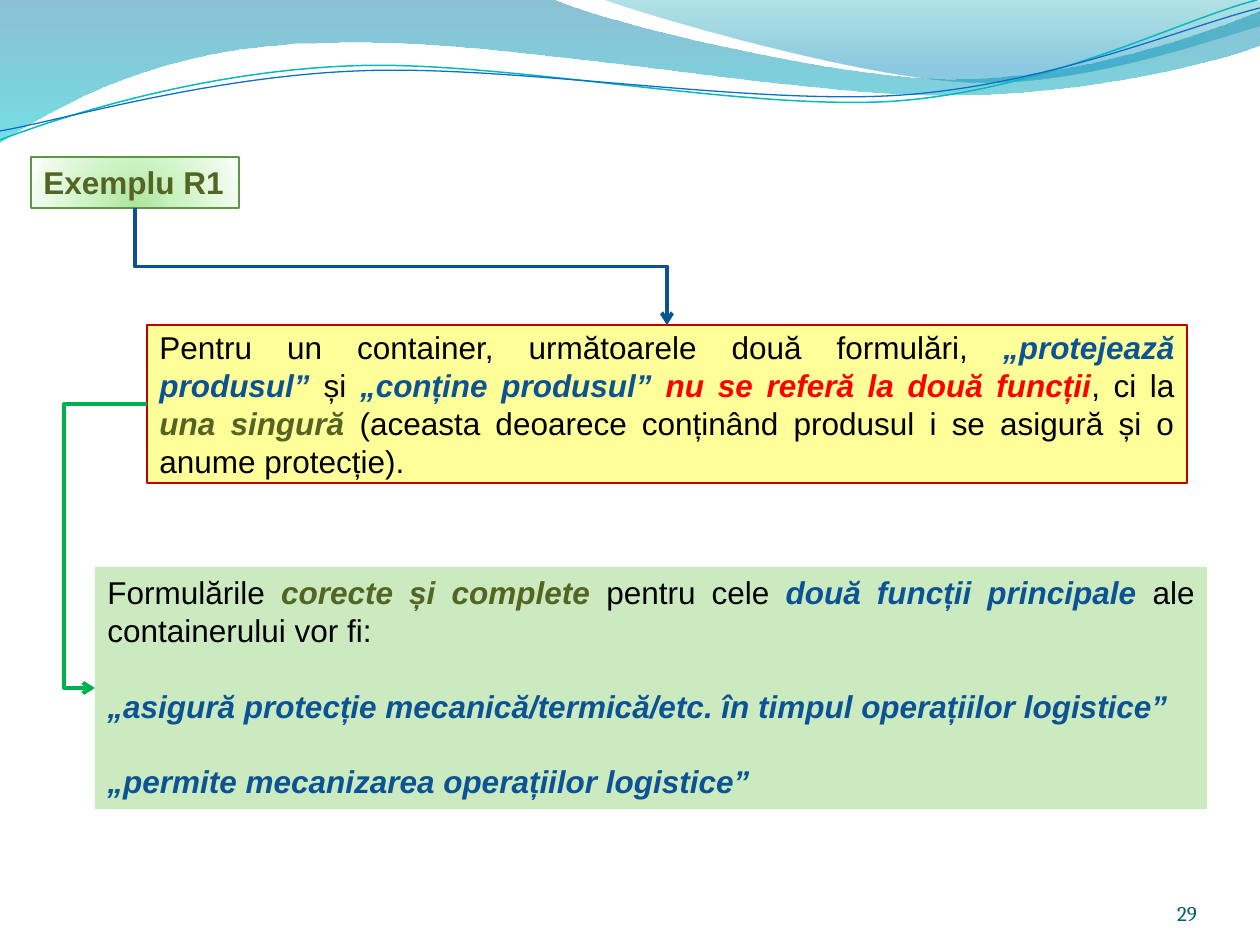
from dataclasses import dataclass

from lxml.etree import SubElement
from pptx import Presentation
from pptx.dml.color import RGBColor
from pptx.enum.shapes import MSO_CONNECTOR, MSO_SHAPE
from pptx.enum.text import MSO_ANCHOR, PP_ALIGN
from pptx.oxml.ns import qn
from pptx.util import Emu, Pt

EMU_PER_PX = 914400 / 126


@dataclass(frozen=True)
class Theme:
    font: str = "Arial"
    number_font: str = "Cambria"
    body_size: float = 18
    number_size: float = 12
    paragraph_gap: float = 21.6
    black: str = "000000"
    blue: str = "0B5394"
    red: str = "FF0000"
    olive: str = "546422"
    number: str = "045D75"
    yellow_fill: str = "FFFF99"
    yellow_line: str = "C00000"
    green_fill: str = "CBEAC0"
    title_line: str = "5B9747"
    blue_arrow: str = "095295"
    green_arrow: str = "00B050"


THEME = Theme()

# Content: paragraphs are lists of (text, colour, bold, italic)
PLAIN = (THEME.black, False, False)
BLUE = (THEME.blue, True, True)
OLIVE = (THEME.olive, True, True)
RED = (THEME.red, True, True)
TITLE = [[("Exemplu R1", THEME.olive, True, False)]]
EXAMPLE = [[
    ("Pentru un container, următoarele două formulări, ", *PLAIN),
    ("„protejează produsul” ", *BLUE),
    ("și ", *PLAIN),
    ("„conține produsul” ", *BLUE),
    ("nu se referă la două funcții", *RED),
    (", ci la ", *PLAIN),
    ("una singură ", *OLIVE),
    ("(aceasta deoarece conținând produsul i se asigură și o anume protecție).", *PLAIN),
]]
ANSWER = [
    [
        ("Formulările ", *PLAIN),
        ("corecte și complete ", *OLIVE),
        ("pentru cele ", *PLAIN),
        ("două funcții principale ", *BLUE),
        ("ale containerului vor fi:", *PLAIN),
    ],
    [("„asigură protecție mecanică/termică/etc. în timpul operațiilor logistice”", *BLUE)],
    [("„permite mecanizarea operațiilor logistice”", *BLUE)],
]
NUMBER = [[("29", THEME.number, False, False)]]

# Boxes in px: left, top, width, height
TITLE_BOX = (31, 157, 208, 51)
EXAMPLE_BOX = (147, 325, 1040, 158)
ANSWER_BOX = (95, 567, 1112, 242)
NUMBER_BOX = (1092, 876, 105, 50)

# Wave outlines in px: a pair is a straight step, six numbers are a Bézier curve.
# Gradient stops: position %, colour, opacity %
WAVE_FILLS = [
    ([(0, 0), (554, 0), (600, 21, 837, 79, 955, 79), (1075, 79, 1207, 33, 1260, 11),
      (1260, 45), (1239, 55, 1096, 96, 940, 95), (784, 95, 481, 35, 324, 43),
      (163, 45, 58, 105, 0, 142)],
     [(0, "0074A1", 45), (100, "00C6CF", 55)]),
    ([(604, 0), (641, 14, 859, 78, 969, 82), (1079, 87, 1211, 40, 1260, 26), (1260, 0)],
     [(0, "00A1A9", 30), (80, "008BBF", 45)]),
]
WAVE_LINES = [
    ([(0, 140), (60, 117, 199, 72, 349, 66), (498, 59, 747, 112, 898, 101),
      (1050, 89, 1182, 19, 1257, 0)], "0AB8BF", 0.85),
    ([(0, 131), (59, 121, 207, 77, 357, 71), (508, 64, 752, 106, 903, 95),
      (1053, 84, 1187, 26, 1260, 8)], "0F6FC6", 0.75),
]
TITLE_STOPS = [(0, "ACE49F", 100), (43, "CDF3C4", 100), (93, "EFFBED", 100), (100, "F9FFF8", 100)]


def px(value):
    return Emu(round(value * EMU_PER_PX))


def add_element(parent, tag, **attributes):
    return SubElement(parent, qn(tag), {name: str(value) for name, value in attributes.items()})


def set_gradient(shape, stops, radial=False):
    shape.fill.gradient()
    gradient = shape._element.spPr.find(qn("a:gradFill"))
    for child in list(gradient):
        gradient.remove(child)
    stop_list = add_element(gradient, "a:gsLst")
    for position, colour, opacity in stops:
        stop = add_element(stop_list, "a:gs", pos=position * 1000)
        tint = add_element(stop, "a:srgbClr", val=colour)
        if opacity < 100:
            add_element(tint, "a:alpha", val=opacity * 1000)
    if radial:
        circle = add_element(gradient, "a:path", path="circle")
        add_element(circle, "a:fillToRect", l=50000, t=130000, r=50000, b=-30000)
    else:
        add_element(gradient, "a:lin", ang=90 * 60000, scaled=1)


def set_line(line, colour, width):
    line.color.rgb = RGBColor.from_string(colour)
    line.width = Pt(width)


def add_wave(page, steps, closed):
    # The builder joins the end points; curved steps then become Béziers
    ends = [(px(step[-2]), px(step[-1])) for step in steps]
    builder = page.shapes.build_freeform(*ends[0])
    builder.add_line_segments(ends[1:], close=closed)
    wave = builder.convert_to_shape()
    wave.shadow.inherit = False
    straight_steps = list(wave._element.iter(qn("a:lnTo")))
    for segment, step in zip(straight_steps, steps[1:]):
        if len(step) == 6:
            curve = segment.makeelement(qn("a:cubicBezTo"))
            for x, y in zip(step[::2], step[1::2]):
                add_element(curve, "a:pt", x=px(x) - wave.left, y=px(y) - wave.top)
            segment.getparent().replace(segment, curve)
    return wave


def write(box, paragraphs, align, anchor, font=THEME.font, size=THEME.body_size, wrap=True):
    frame = box.text_frame
    frame.word_wrap = wrap
    frame.vertical_anchor = anchor
    for index, spans in enumerate(paragraphs):
        para = frame.add_paragraph() if index else frame.paragraphs[0]
        para.alignment = align
        if index:
            para.space_before = Pt(THEME.paragraph_gap)
        for text, colour, bold, italic in spans:
            span = para.add_run()
            span.text = text
            span.font.name, span.font.size = font, Pt(size)
            span.font.bold, span.font.italic = bold, italic
            span.font.color.rgb = RGBColor.from_string(colour)


def add_box(page, place, fill=None, line=None, width=1):
    box = page.shapes.add_shape(MSO_SHAPE.RECTANGLE, *map(px, place))
    box.shadow.inherit = False
    if fill:
        box.fill.solid()
        box.fill.fore_color.rgb = RGBColor.from_string(fill)
    if line:
        set_line(box.line, line, width)
    else:
        box.line.fill.background()
    return box


def add_elbow(page, start, end, colour, bend, downward=False):
    (x1, y1), (x2, y2) = start, end
    if downward:  # a quarter turn about the middle swaps width and height
        middle_x, middle_y = (x1 + x2) / 2, (y1 + y2) / 2
        half_x, half_y = (y2 - y1) / 2, (x2 - x1) / 2
        x1, x2 = middle_x + half_x, middle_x - half_x
        y1, y2 = middle_y - half_y, middle_y + half_y
    elbow = page.shapes.add_connector(MSO_CONNECTOR.ELBOW, *map(px, (x1, y1, x2, y2)))
    set_line(elbow.line, colour, 2.25)
    properties = elbow._element.spPr
    if downward:
        properties.find(qn("a:xfrm")).set("rot", str(270 * 60000))
    adjustments = properties.find(qn("a:prstGeom")).find(qn("a:avLst"))
    add_element(adjustments, "a:gd", name="adj1", fmla=f"val {round(bend * 100000)}")
    add_element(properties.find(qn("a:ln")), "a:tailEnd", type="arrow")
    add_element(properties, "a:effectLst")


deck = Presentation()
deck.slide_width, deck.slide_height = px(1260), px(945)
page = deck.slides.add_slide(deck.slide_layouts[6])

# Header waves
for steps, stops in WAVE_FILLS:
    wave = add_wave(page, steps, closed=True)
    set_gradient(wave, stops)
    wave.line.fill.background()
for steps, colour, width in WAVE_LINES:
    wave = add_wave(page, steps, closed=False)
    wave.fill.background()
    set_line(wave.line, colour, width)

# Text boxes
example = add_box(page, EXAMPLE_BOX, THEME.yellow_fill, THEME.yellow_line)
write(example, EXAMPLE, PP_ALIGN.JUSTIFY, MSO_ANCHOR.MIDDLE)
title = add_box(page, TITLE_BOX, line=THEME.title_line, width=0.75)
set_gradient(title, TITLE_STOPS, radial=True)
write(title, TITLE, PP_ALIGN.LEFT, MSO_ANCHOR.TOP, wrap=False)
answer = add_box(page, ANSWER_BOX, THEME.green_fill)
write(answer, ANSWER, PP_ALIGN.JUSTIFY, MSO_ANCHOR.TOP)

# Arrows from title to example, and from example to answer
title_bottom = (TITLE_BOX[0] + TITLE_BOX[2] / 2, TITLE_BOX[1] + TITLE_BOX[3])
example_top = (EXAMPLE_BOX[0] + EXAMPLE_BOX[2] / 2, EXAMPLE_BOX[1])
example_left, answer_left = ((box[0], box[1] + box[3] / 2) for box in (EXAMPLE_BOX, ANSWER_BOX))
add_elbow(page, title_bottom, example_top, THEME.blue_arrow, 0.5, downward=True)
add_elbow(page, example_left, answer_left, THEME.green_arrow, 1.6)

# Page number
number = page.shapes.add_textbox(*map(px, NUMBER_BOX))
frame = number.text_frame
frame.margin_left = frame.margin_top = frame.margin_right = frame.margin_bottom = 0
write(number, NUMBER, PP_ALIGN.RIGHT, MSO_ANCHOR.BOTTOM, THEME.number_font, THEME.number_size)

deck.save("out.pptx")
